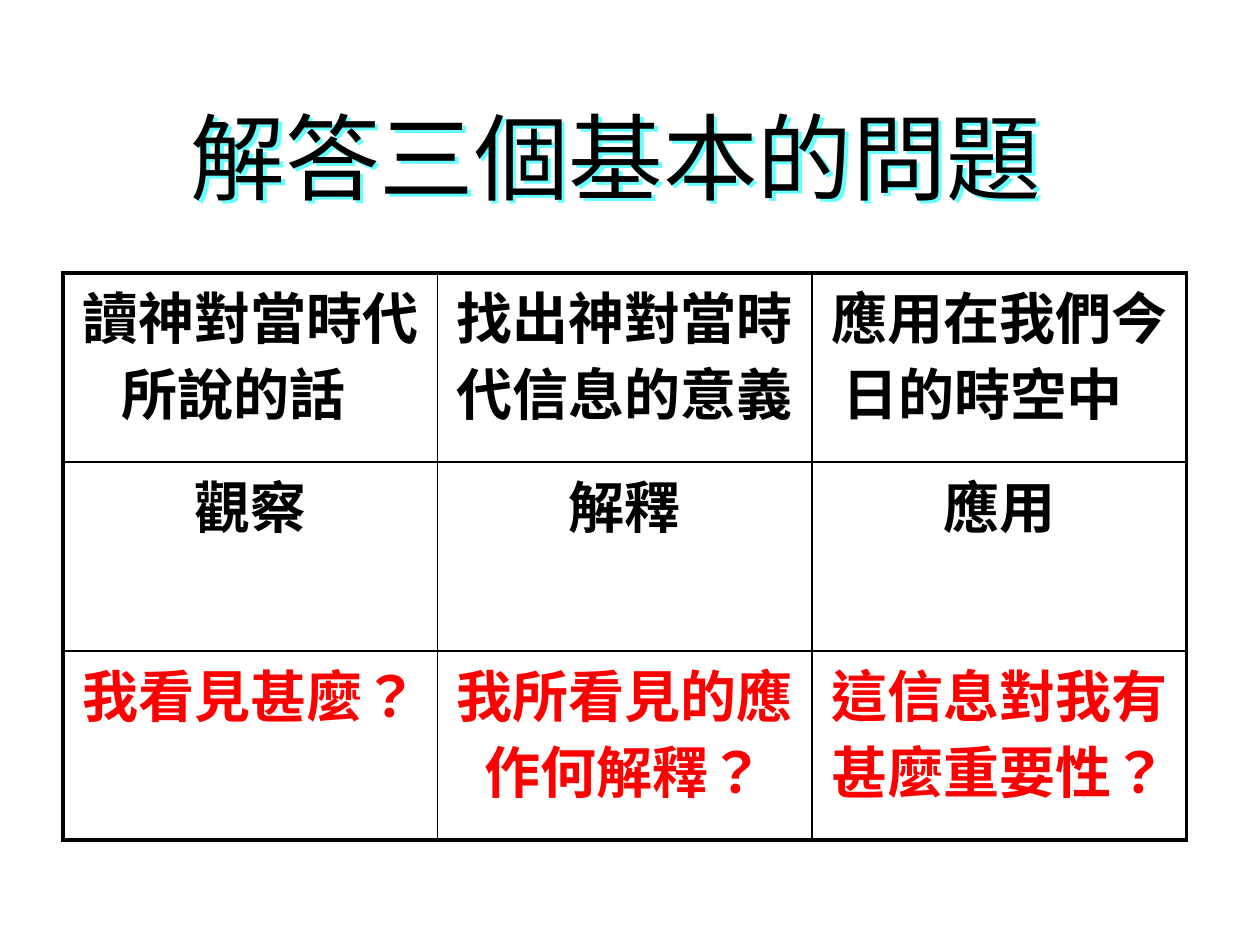
from lxml import etree
from pptx import Presentation, util as u
from pptx.dml.color import RGBColor
from pptx.enum import text
from pptx.oxml.ns import qn

FONT = "Noto Sans Mono"
BLACK, RED, CYAN = "000000", "FF0000", "66FFFF"
THIN, THICK = 1, 2.25

TITLE = "解答三個基本的問題"
ROWS = [
    (BLACK, ["讀神對當時代所說的話 ", "找出神對當時代信息的意義 ", "應用在我們今日的時空中 "]),
    (BLACK, ["觀察", "解釋", "應用"]),
    (RED, ["我看見甚麼？", "我所看見的應作何解釋？", "這信息對我有甚麼重要性？"]),
]


def color(code):
    return RGBColor.from_string(code)


def put(item, **vals):
    """Set each given value as an attribute of item."""
    for key, val in vals.items():
        setattr(item, key, val)


def node(top, tag, **vals):
    """Add a child element with the given XML attributes."""
    return etree.SubElement(top, qn(tag), {k: str(v) for k, v in vals.items()})


class Deck:
    def __init__(self, slide, font):
        self.slide, self.font = slide, font

    def label(self, frame, words, code, para, **style):
        """Fill the first paragraph of a text frame."""
        line = frame.paragraphs[0]
        put(line, **para)
        run = line.add_run()
        run.text = words
        put(run.font, name=self.font, **style)
        run.font.color.rgb = color(code)
        props = run.font._element
        props.set("lang", "zh-TW")
        node(props, "a:ea", typeface=self.font)

    def title(self, words, spot):
        box = self.slide.shapes.add_textbox(*map(u.Cm, spot))
        put(box.text_frame, word_wrap=True,
            vertical_anchor=text.MSO_ANCHOR.MIDDLE)
        self.label(box.text_frame, words, BLACK, {"line_spacing": 0.9},
                   size=u.Pt(54))
        glow = node(box._element.spPr, "a:effectLst")
        shade = node(glow, "a:outerShdw", dist=u.Pt(2.5), dir=45 * 60000,
                     algn="ctr", rotWithShape=0)
        node(shade, "a:srgbClr", val=CYAN)

    def edge(self, cell, side, width):
        line = node(cell._tc.get_or_add_tcPr(), "a:ln" + side, w=u.Pt(width))
        node(node(line, "a:solidFill"), "a:srgbClr", val=BLACK)

    def table(self, rows, spot):
        high, wide = len(rows), len(rows[0][1])
        left, top, width, height = map(u.Cm, spot)
        grid = self.slide.shapes.add_table(high, wide, left, top, width,
                                           height).table
        put(grid, first_row=False, horz_banding=False)
        for r, (code, words) in enumerate(rows):
            for c, word in enumerate(words):
                cell = grid.cell(r, c)
                outer = {"L": c == 0, "R": c == wide - 1,
                         "T": r == 0, "B": r == high - 1}
                for side, rim in outer.items():
                    self.edge(cell, side, THICK if rim else THIN)
                cell.fill.background()
                self.label(cell.text_frame, word, code,
                           {"alignment": text.PP_ALIGN.CENTER},
                           size=u.Pt(32), bold=True)


def main():
    show = Presentation()
    put(show, slide_width=u.Cm(25.4), slide_height=u.Cm(19.05))
    deck = Deck(show.slides.add_slide(show.slide_layouts[6]), FONT)
    deck.title(TITLE, (3.6, 1.7, 17.99, 3.18))
    deck.table(ROWS, (1.27, 5.5, 22.65, 11.43))
    show.save("out.pptx")


if __name__ == "__main__":
    main()
